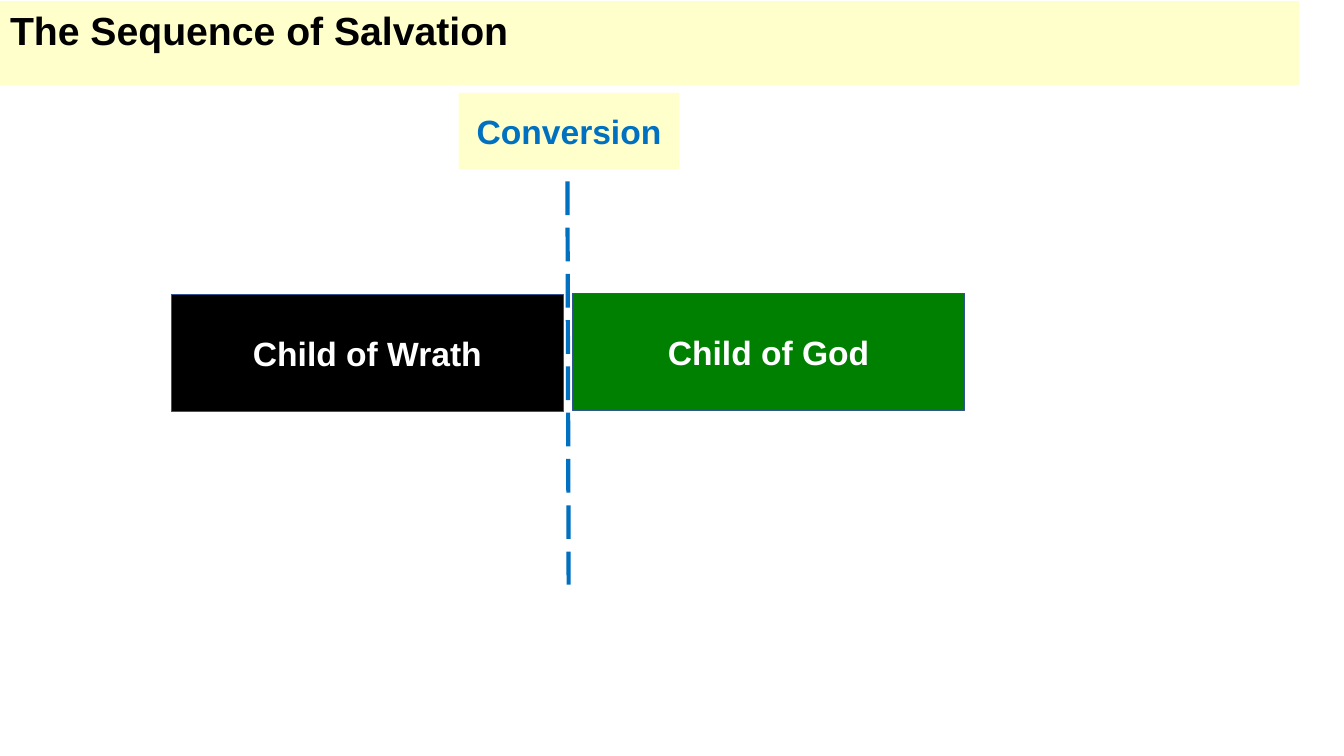
from lxml.etree import SubElement
from pptx import Presentation
from pptx.dml.color import RGBColor
from pptx.enum.dml import MSO_LINE
from pptx.enum.shapes import MSO_CONNECTOR, MSO_SHAPE
from pptx.enum.text import MSO_ANCHOR, MSO_AUTO_SIZE, PP_ALIGN
from pptx.oxml.ns import qn
from pptx.util import Cm, Pt

CREAM, BLUE, EDGE = "FFFFCC", "0070C0", "325491"
HEADING = "The Sequence of Salvation"
HEADING_BAND = (0, 0.03, 32.74, 1.45)
DIVIDER = (14.3, 4.57, 14.33, 14.73)
STAGES = [
    ("Child of Wrath", (4.32, 7.42, 9.88, 2.95), "000000", "FFFFFF", EDGE),
    ("Conversion", (11.56, 2.34, 5.56, 1.93), CREAM, BLUE, None),
    ("Child of God", (14.43, 7.39, 9.88, 2.95), "008000", "FFFFFF", EDGE),
]


def colour(value):
    return RGBColor.from_string(value)


def paint(part, fill):
    part.fill.solid()
    part.fill.fore_color.rgb = colour(fill)


def write(part, text, size=24, ink="000000", align=PP_ALIGN.CENTER, anchor=MSO_ANCHOR.MIDDLE):
    frame = part.text_frame
    frame.text = text
    frame.word_wrap = True
    frame.vertical_anchor = anchor
    paragraph = frame.paragraphs[0]
    paragraph.alignment = align
    font = paragraph.runs[0].font
    font.name, font.size, font.bold = "Arial", Pt(size), True
    font.color.rgb = colour(ink)


def add_stage(slide, text, box, fill, ink, edge):
    stage = slide.shapes.add_shape(MSO_SHAPE.RECTANGLE, *map(Cm, box))
    stage.shadow.inherit = False
    paint(stage, fill)
    if edge:
        stage.line.color.rgb = colour(edge)
        stage.line.width = Pt(1)
    else:
        stage.line.fill.background()
    write(stage, text, ink=ink)


def main():
    deck = Presentation()
    deck.slide_width, deck.slide_height = Cm(33.87), Cm(19.05)
    slide = deck.slides.add_slide(deck.slide_layouts[5])

    heading = slide.shapes.title
    heading.left, heading.top, heading.width, heading.height = map(Cm, HEADING_BAND)
    paint(heading, CREAM)
    write(heading, HEADING, size=28, align=PP_ALIGN.LEFT, anchor=MSO_ANCHOR.TOP)
    heading.text_frame.auto_size = MSO_AUTO_SIZE.SHAPE_TO_FIT_TEXT

    divider = slide.shapes.add_connector(MSO_CONNECTOR.STRAIGHT, *map(Cm, DIVIDER))
    divider.line.color.rgb = colour(BLUE)
    divider.line.width = Pt(3)
    divider.line.dash_style = MSO_LINE.LONG_DASH
    SubElement(divider._element.spPr, qn("a:effectLst"))

    for stage in STAGES:
        add_stage(slide, *stage)

    deck.save("out.pptx")


if __name__ == "__main__":
    main()
